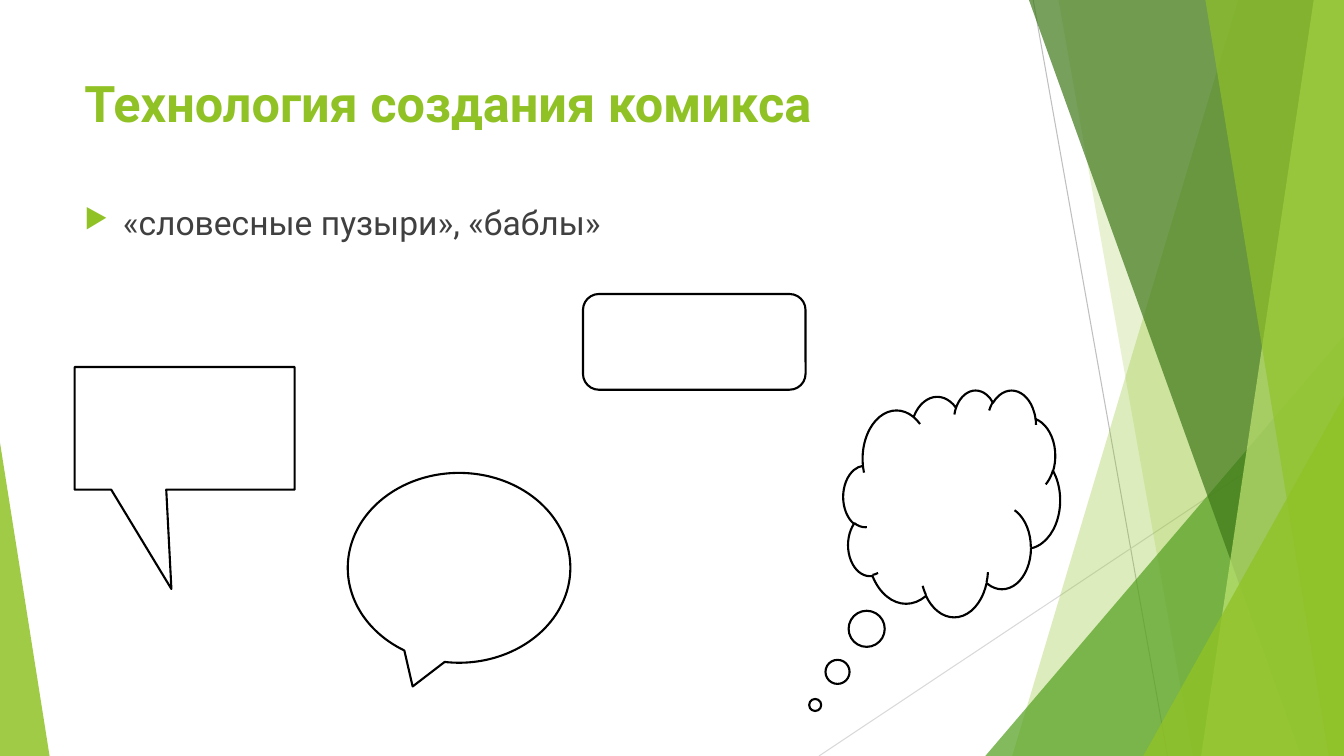
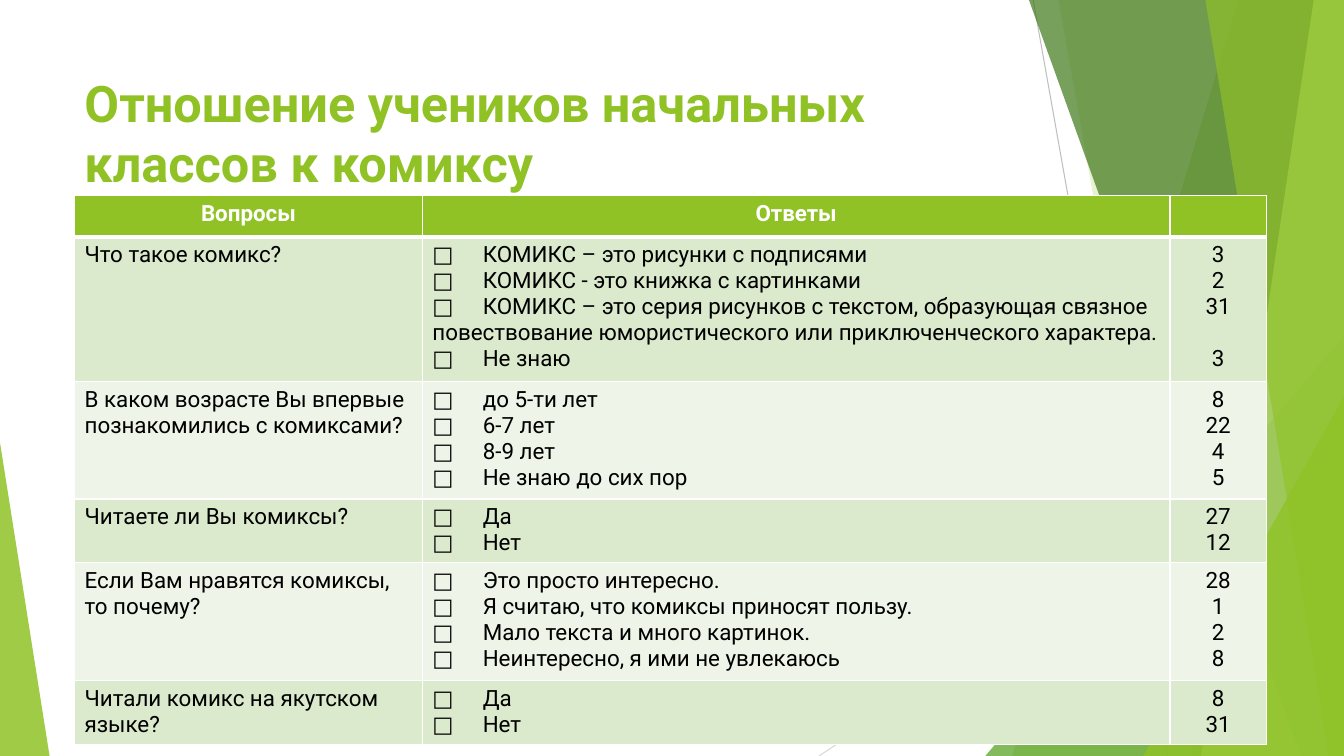
from lxml.etree import SubElement
from pptx import Presentation
from pptx.dml.color import RGBColor
from pptx.enum.shapes import MSO_CONNECTOR, MSO_SHAPE
from pptx.enum.text import PP_ALIGN
from pptx.oxml.ns import qn
from pptx.util import Emu, Inches, Pt

COLUMNS, ROWS = 160, 90
UNIT = Inches(1 / 12)
MARGIN = 8.88
TEXT_WIDTH = 112.8
GREEN, WHITE, BLACK, GREY = "90C226", "FFFFFF", "000000", "404040"


def grid(*units):
    """Turn counts of grid columns or rows into lengths."""
    return [Emu(round(count * UNIT)) for count in units]


def style(paragraph, size, colour, bold=False, align=PP_ALIGN.LEFT):
    paragraph.alignment = align
    font = paragraph.font
    font.name, font.size, font.bold = "Roboto", Pt(size), bold
    font.color.rgb = RGBColor.from_string(colour)


deck = Presentation()
deck.slide_width, deck.slide_height = grid(COLUMNS, ROWS)

# Two places make a slanted band (top and bottom x of its left edge);
# four make a triangle standing on the bottom edge (left, top, width, apex).
facets = [
    (GREEN, 30, (147.4, 120.5)),
    (GREEN, 20, (126, 142)),
    ("54A021", 72, (117.3, 40, 42.7, 1)),
    ("3F7819", 70, (122.5, 154.9)),
    ("C0E474", 70, (156.4, 143)),
    (GREEN, 65, (143.5, 158.2)),
    (GREEN, 80, (136.1, 47.2, 23.9, 1)),
    (GREEN, 85, (0, 52.7, 5.9, 0)),
]
rays = [("BFBFBF", (123, 0, 139, ROWS)), ("D9D9D9", (COLUMNS, 48.4, 97.5, ROWS))]
headings = ["Технология создания комикса", "Отношение учеников начальных классов к комиксу"]

for heading in headings:
    slide = deck.slides.add_slide(deck.slide_layouts[6])
    for colour, ends in rays:
        ray = slide.shapes.add_connector(MSO_CONNECTOR.STRAIGHT, *grid(*ends))
        ray.line.color.rgb = RGBColor.from_string(colour)
        ray.line.width = Pt(0.75)
        SubElement(ray._element.spPr, qn("a:effectLst"))

    for colour, opacity, place in facets:
        if len(place) == 2:
            top_x, bottom_x = place
            band = slide.shapes.build_freeform(*grid(top_x, 0))
            corners = [(COLUMNS, 0), (COLUMNS, ROWS), (bottom_x, ROWS)]
            band.add_line_segments([grid(*corner) for corner in corners])
            facet = band.convert_to_shape()
        else:
            left, top, width, apex = place
            facet = slide.shapes.add_shape(
                MSO_SHAPE.ISOSCELES_TRIANGLE, *grid(left, top, width, ROWS - top))
            facet.adjustments[0] = apex
        facet.shadow.inherit = False
        facet.line.fill.background()
        facet.fill.solid()
        facet.fill.fore_color.rgb = RGBColor.from_string(colour)
        tint = facet._element.spPr.find(".//" + qn("a:srgbClr"))
        SubElement(tint, qn("a:alpha"), val=str(opacity * 1000))

    title = slide.shapes.add_textbox(*grid(MARGIN, 8, TEXT_WIDTH, 17.3)).text_frame
    title.word_wrap = True
    title.text = heading
    style(title.paragraphs[0], 36, GREEN, bold=True)

bubble_slide, survey_slide = deck.slides

# Speech bubbles
intro = bubble_slide.shapes.add_textbox(*grid(MARGIN, 23.4, TEXT_WIDTH, 6)).text_frame
intro.word_wrap = True
intro.text = "«словесные пузыри», «баблы»"
bubble_terms = intro.paragraphs[0]
properties = bubble_terms._p.get_or_add_pPr()
hanging = Inches(0.38)
properties.set("marL", str(hanging))
properties.set("indent", str(-hanging))
SubElement(SubElement(properties, qn("a:buClr")), qn("a:srgbClr"), val=GREEN)
SubElement(properties, qn("a:buSzPct"), val="80000")
SubElement(properties, qn("a:buChar"), char="▶")
style(bubble_terms, 24, GREY)

bubbles = [
    (MSO_SHAPE.RECTANGULAR_CALLOUT, (MARGIN, 43.7, 26.2, 14.6), (-0.06, 1.31)),
    (MSO_SHAPE.OVAL_CALLOUT, (41.4, 56.3, 26.5, 22.6), ()),
    (MSO_SHAPE.CLOUD_CALLOUT, (100.4, 46.4, 25.8, 27), (-0.63, 0.89)),
    (MSO_SHAPE.ROUNDED_RECTANGLE, (69.4, 35, 26.5, 11.4), ()),
]
for outline, place, tail in bubbles:
    bubble = bubble_slide.shapes.add_shape(outline, *grid(*place))
    for index, offset in enumerate(tail):
        bubble.adjustments[index] = offset
    bubble.shadow.inherit = False
    bubble.fill.background()
    bubble.line.color.rgb = RGBColor.from_string(BLACK)
    bubble.line.width = Pt(1.5)

# Survey table
survey = [
    ("Что такое комикс?", [
        ("КОМИКС – это рисунки с подписями", 3),
        ("КОМИКС - это книжка с картинками", 2),
        ("КОМИКС – это серия рисунков с текстом, образующая связное "
         "повествование юмористического или приключенческого характера.", 31),
        ("Не знаю", 3)]),
    ("В каком возрасте Вы впервые познакомились с комиксами?", [
        ("до 5-ти лет", 8), ("6-7 лет", 22), ("8-9 лет", 4), ("Не знаю до сих пор", 5)]),
    ("Читаете ли Вы комиксы?", [("Да", 27), ("Нет", 12)]),
    ("Если Вам нравятся комиксы, то почему?", [
        ("Это просто интересно.", 28),
        ("Я считаю, что комиксы приносят пользу.", 1),
        ("Мало текста и много картинок.", 2),
        ("Неинтересно, я ими не увлекаюсь", 8)]),
    ("Читали комикс на якутском языке?", [("Да", 8), ("Нет", 31)]),
]
LINE_ROWS, PADDING_ROWS, HEADER_ROWS = 3.1, 1.2, 4.9
LINE_CHARACTERS = 75
column_widths = [41.4, 89, 11.5]

contents = [(["Вопросы"], ["Ответы"], [""])]
row_heights = [HEADER_ROWS]
for question, answers in survey:
    contents.append(([question],
                     [f"□\t{answer}" for answer, count in answers],
                     [str(count) for answer, count in answers]))
    line_count = sum(1 + (len(answer) > LINE_CHARACTERS) for answer, count in answers)
    row_heights.append(PADDING_ROWS + LINE_ROWS * line_count)

table = survey_slide.shapes.add_table(
    len(contents), len(column_widths),
    *grid(MARGIN, 23.3, sum(column_widths), sum(row_heights))).table
for column, width in zip(table.columns, grid(*column_widths)):
    column.width = width
for row, height in zip(table.rows, grid(*row_heights)):
    row.height = height

for row_index, row_content in enumerate(contents):
    is_header = row_index == 0
    row_fill = GREEN if is_header else ("EEF4E8", "DBE9CD")[row_index % 2]
    for column_index, lines in enumerate(row_content):
        cell = table.cell(row_index, column_index)
        borders = {"L": 1, "R": 1, "T": 3 if row_index == 1 else 1, "B": 3 if is_header else 1}
        for side, points in borders.items():
            border = SubElement(cell._tc.get_or_add_tcPr(), qn(f"a:ln{side}"), w=str(Pt(points)))
            SubElement(SubElement(border, qn("a:solidFill")), qn("a:srgbClr"), val=WHITE)
        cell.fill.solid()
        cell.fill.fore_color.rgb = RGBColor.from_string(row_fill)

        cell.text = "\n".join(lines)
        centred = is_header or column_index == 2
        for index, paragraph in enumerate(cell.text_frame.paragraphs):
            if column_index == 1 and not is_header:
                tabs = SubElement(paragraph._p.get_or_add_pPr(), qn("a:tabLst"))
                SubElement(tabs, qn("a:tab"), pos=str(Inches(0.5)), algn="l")
            if column_index == 2 and len(row_content[1][index]) > LINE_CHARACTERS:
                paragraph.space_after = Pt(18.75)
            style(paragraph, 16, WHITE if is_header else BLACK, is_header,
                  PP_ALIGN.CENTER if centred else PP_ALIGN.LEFT)

deck.save("out.pptx")
